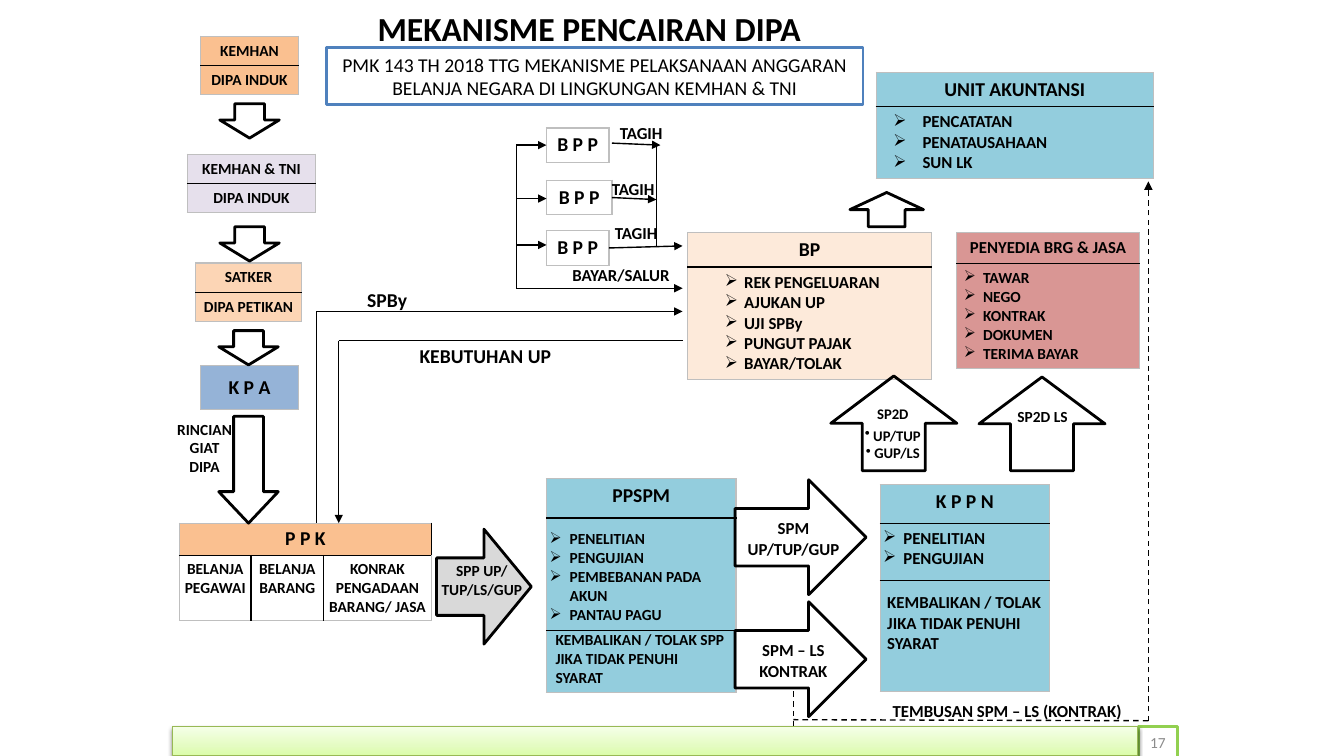
"""Builds the slide on how DIPA budget funds are disbursed."""
from dataclasses import dataclass

from lxml import etree
from pptx import Presentation
from pptx.dml.color import RGBColor
from pptx.enum.dml import MSO_LINE
from pptx.enum.shapes import MSO_CONNECTOR, MSO_SHAPE
from pptx.enum.text import MSO_ANCHOR, PP_ALIGN
from pptx.oxml import parse_xml
from pptx.oxml.ns import nsdecls, qn
from pptx.util import Inches, Pt

TOP, MIDDLE = MSO_ANCHOR.TOP, MSO_ANCHOR.MIDDLE
LEFT, CENTER = PP_ALIGN.LEFT, PP_ALIGN.CENTER
UP, RIGHT, RECT = MSO_SHAPE.UP_ARROW, MSO_SHAPE.RIGHT_ARROW, MSO_SHAPE.RECTANGLE
STRAIGHT, DASH = MSO_CONNECTOR.STRAIGHT, MSO_LINE.DASH
MARGINS = ("margin_left", "margin_top", "margin_right", "margin_bottom")


@dataclass(frozen=True)
class Theme:
    font: str = "Calibri"
    ink: str = "000000"
    white: str = "FFFFFF"
    edge: str = "BFBFBF"
    orange: str = "FAC090"
    peach: str = "FCD5B5"
    cream: str = "FDEADA"
    lilac: str = "E6E0EC"
    blue: str = "95B3D7"
    aqua: str = "93CDDD"
    rose: str = "D99694"
    gray: str = "D9D9D9"
    frame: str = "4F81BD"
    lime: str = "92D050"
    olive: str = "98B955"
    muted: str = "8C8C8C"
    glow: tuple = ((0, "DAFDA7"), (35, "E4FCC2"), (100, "F5FFE7"))
    title: float = 24
    head: float = 14
    body: float = 12
    small: float = 11
    tiny: float = 10.5


def rgb(code):
    return RGBColor.from_string(code)


def shadow(blur, distance, angle, alpha):
    return parse_xml(
        f'<a:effectLst {nsdecls("a")}><a:outerShdw blurRad="{Pt(blur)}" dist="{Pt(distance)}" '
        f'dir="{angle * 60000}" rotWithShape="0"><a:srgbClr val="000000">'
        f'<a:alpha val="{alpha * 1000}"/></a:srgbClr></a:outerShdw></a:effectLst>')


class Board:
    def __init__(self, deck, theme):
        self.theme = theme
        self.page = deck.slides.add_slide(deck.slide_layouts[5])
        self.shapes = self.page.shapes

    def set_text(self, frame, lines, size, align=CENTER, bold=True, color=None,
                 bullet=None, indent=(0, 0), plain=0, after=0):
        frame.word_wrap = True
        for number, line in enumerate(lines):
            para = frame.paragraphs[0] if number == 0 else frame.add_paragraph()
            para.alignment = align
            if after and number == 0:
                para.space_after = Pt(after)
            span = para.add_run()
            span.text = line
            formats = {"name": self.theme.font, "size": Pt(size), "bold": bold}
            for key, value in formats.items():
                setattr(span.font, key, value)
            span.font.color.rgb = rgb(color or self.theme.ink)
            if bullet and number >= plain:
                props = para._p.get_or_add_pPr()
                props.set("marL", str(Inches(indent[0])))
                props.set("indent", str(Inches(indent[1])))
                etree.SubElement(props, qn("a:buChar"), char=bullet)

    def title(self, box, text):
        shape = self.shapes.title
        for key, value in zip(("left", "top", "width", "height"), box):
            setattr(shape, key, Inches(value))
        shape.text_frame.vertical_anchor = MIDDLE
        self.set_text(shape.text_frame, [text], self.theme.title, after=6)
        props = shape.text_frame.paragraphs[0].runs[0].font._element
        props.find(qn("a:solidFill")).addnext(shadow(3, 3, 45, 50))

    def label(self, box, lines, size, **style):
        shape = self.shapes.add_textbox(*map(Inches, box))
        shape.text_frame.vertical_anchor = MIDDLE
        self.set_text(shape.text_frame, lines, size, **style)

    def shape(self, kind, box, fill=None, line=None, weight=2, turn=0, head=None):
        shape = self.shapes.add_shape(kind, *map(Inches, box))
        shape.shadow.inherit = False
        shape.rotation = turn
        if head:
            shape.adjustments[1] = head
        if fill:
            shape.fill.solid()
            shape.fill.fore_color.rgb = rgb(fill)
        else:
            shape.fill.background()
        shape.line.color.rgb = rgb(line or self.theme.ink)
        shape.line.width = Pt(weight)
        return shape

    def strip(self, box):
        shape = self.shape(RECT, box, self.theme.white, self.theme.olive, 0.75)
        props = shape.element.spPr
        stops = "".join(f'<a:gs pos="{at * 1000}"><a:srgbClr val="{code}"/></a:gs>'
                        for at, code in self.theme.glow)
        props.replace(props.find(qn("a:solidFill")), parse_xml(
            f'<a:gradFill {nsdecls("a")} rotWithShape="1"><a:gsLst>{stops}</a:gsLst>'
            '<a:lin ang="16200000" scaled="0"/></a:gradFill>'))
        props.replace(props.find(qn("a:effectLst")), shadow(3.1, 1.6, 90, 38))

    def line(self, start, end, arrow=False, dashed=False):
        link = self.shapes.add_connector(STRAIGHT, *map(Inches, start + end))
        link.line.color.rgb = rgb(self.theme.ink)
        link.line.width = Pt(1)
        if dashed:
            link.line.dash_style = DASH
        if arrow:
            etree.SubElement(link.line._get_or_add_ln(), qn("a:tailEnd"), type="triangle")
        etree.SubElement(link.element.spPr, qn("a:effectLst"))

    def table(self, corner, widths, heights, rows, fills):
        box = (*corner, sum(widths), sum(heights))
        grid = self.shapes.add_table(len(heights), len(widths), *map(Inches, box)).table
        grid.first_row = grid.horz_banding = False
        for column, width in zip(grid.columns, widths):
            column.width = Inches(width)
        for row, height in zip(grid.rows, heights):
            row.height = Inches(height)
        for r, cells in enumerate(rows):
            if len(cells) < len(widths):
                grid.cell(r, 0).merge(grid.cell(r, len(widths) - 1))
            for c, content in enumerate(cells):
                self.fill_cell(grid.cell(r, c), fills[r], **content)
            for c in range(len(widths)):
                outer = {"L": c == 0, "R": c == len(widths) - 1,
                         "T": r == 0, "B": r == len(heights) - 1}
                self.borders(grid.cell(r, c), outer)

    def fill_cell(self, cell, fill, lines, size, insets=(0.07, 0.05, 0.07, 0.05),
                  anchor=TOP, **style):
        for key, value in zip(MARGINS, insets):
            setattr(cell, key, Inches(value))
        cell.vertical_anchor = anchor
        if fill:
            cell.fill.solid()
            cell.fill.fore_color.rgb = rgb(fill)
        else:
            cell.fill.background()
        self.set_text(cell.text_frame, lines, size, **style)

    def borders(self, cell, outer):
        props = cell._tc.get_or_add_tcPr()
        for place, (side, is_outer) in enumerate(outer.items()):
            code = self.theme.edge if is_outer else self.theme.ink
            props.insert(place, parse_xml(
                f'<a:ln{side} {nsdecls("a")} w="{Pt(1)}"><a:solidFill>'
                f'<a:srgbClr val="{code}"/></a:solidFill></a:ln{side}>'))

    def card(self, corner, width, heights, fill, *cells):
        self.table(corner, [width], heights, [[cell] for cell in cells], [fill] * len(cells))


def cell(size, *lines, **style):
    return {"lines": lines, "size": size, **style}


def points(size, indent, *lines, **style):
    return cell(size, *lines, align=LEFT, bullet="➢", indent=indent, **style)


def draw_tables(board):
    t = board.theme
    for left, top, width, fill, names in (
            (1.99, 0.36, 0.97, t.orange, ("KEMHAN", "DIPA INDUK")),
            (1.86, 1.53, 1.27, t.lilac, ("KEMHAN & TNI", "DIPA INDUK")),
            (1.94, 2.61, 1.05, t.peach, ("SATKER", "DIPA PETIKAN"))):
        board.card((left, top), width, [0.29, 0.29], fill, *(cell(t.small, name) for name in names))
    board.card((1.99, 3.63), 0.97, [0.43], t.blue, cell(t.head, "K P A", anchor=MIDDLE))
    for top, width in ((1.27, 0.62), (1.79, 0.65), (2.29, 0.62)):
        board.card((5.42, top), width, [0.34], None, cell(t.head, "B P P", anchor=MIDDLE))
    tight = {"insets": (0, 0.04, 0, 0.04)}
    spending = (("BELANJA", "PEGAWAI"), ("BELANJA", "BARANG"), ("KONRAK PENGADAAN BARANG/ JASA",))
    board.table((1.78, 5.19), [0.71, 0.72, 1.07], [0.32, 0.64],
                [[cell(t.head, "P P K", **tight)],
                 [cell(t.small, *lines, **tight) for lines in spending]], [t.orange, None])
    board.card((5.42, 4.75), 1.88, [0.39, 1.1, 0.62], t.aqua, cell(t.head, "PPSPM"),
               points(t.small, (0.2, -0.2), "PENELITIAN", "PENGUJIAN", "PEMBEBANAN PADA AKUN",
                      "PANTAU PAGU", insets=(0.03, 0.12, 0.07, 0.05)),
               cell(t.small, "KEMBALIKAN / TOLAK SPP JIKA TIDAK PENUHI SYARAT", align=LEFT,
                    anchor=MIDDLE, insets=(0.09, 0, 0.07, 0.05)))
    board.card((8.73, 4.81), 1.68, [0.38, 0.57, 1.1], t.aqua, cell(t.head, "K P P N"),
               points(t.body, (0.2, -0.2), "PENELITIAN", "PENGUJIAN",
                      insets=(0.03, 0.05, 0.07, 0.05)),
               cell(t.body, "KEMBALIKAN / TOLAK JIKA TIDAK PENUHI SYARAT", align=LEFT,
                    insets=(0.07, 0.12, 0.07, 0.05)))
    board.card((6.82, 2.31), 2.42, [0.34, 1.11], t.cream, cell(t.head, "BP"),
               points(t.body, (0.49, -0.19), "REK PENGELUARAN", "AJUKAN UP", "UJI SPBy",
                      "PUNGUT PAJAK", "BAYAR/TOLAK"))
    board.card((9.49, 2.31), 1.81, [0.3, 1.04], t.rose, cell(t.body, "PENYEDIA BRG & JASA"),
               points(t.small, (0.19, -0.19), "TAWAR", "NEGO", "KONTRAK", "DOKUMEN",
                      "TERIMA BAYAR"))
    board.card((8.69, 0.72), 2.75, [0.34, 0.71], t.aqua, cell(t.head, "UNIT AKUNTANSI"),
               points(t.body, (0.39, -0.29), "PENCATATAN", "PENATAUSAHAAN", "SUN LK"))


def draw_flow(board):
    t = board.theme
    board.shape(RIGHT, (4.33, 5.25, 0.94, 1.14), t.gray)
    for top in (4.76, 5.97):
        board.shape(RIGHT, (7.29, top, 1.3, 1.14))
    for box in ((8.24, 3.73, 1.25, 0.94), (9.71, 3.74, 1.25, 0.93), (8.43, 1.91, 0.73, 0.34)):
        board.shape(UP, box)
    for left, top, height in ((2.18, 1.03, 0.34), (2.18, 2.25, 0.34),
                              (2.17, 3.28, 0.34), (2.17, 4.13, 1.06)):
        board.shape(UP, (left, top, 0.59, height), turn=180, head=0.53)
    for start, end in (((6.07, 1.42), (6.55, 1.44)), ((6.07, 1.96), (6.51, 1.98)),
                       ((6.04, 2.46), (6.77, 2.44)), ((5.12, 2.86), (6.77, 2.86)),
                       ((3.14, 3.09), (6.77, 3.09)), ((3.36, 3.38), (3.36, 5.19)),
                       *(((5.12, y), (5.42, y)) for y in (1.44, 1.97, 2.43))):
        board.line(start, end, arrow=True)
    for start, end in (((6.51, 1.45), (6.51, 2.44)), ((5.12, 1.44), (5.12, 2.86)),
                       ((3.14, 3.09), (3.14, 5.19)), ((3.36, 3.38), (6.77, 3.38))):
        board.line(start, end)
    board.line((7.87, 6.86), (7.87, 7.26), dashed=True)
    board.line((11.39, 7.15), (7.87, 7.14), dashed=True)
    board.line((11.39, 7.25), (11.39, 1.8), arrow=True, dashed=True)


def draw_labels(board):
    t = board.theme
    for box, size, *lines in (
            ((4.15, 5.44, 1.26, 0.62), t.small, "SPP UP/ TUP/LS/GUP"),
            ((7.22, 5.03, 1.3, 0.62), t.body, "SPM UP/TUP/GUP"),
            ((7.22, 6.24, 1.3, 0.62), t.body, "SPM – LS KONTRAK"),
            ((9.98, 3.96, 0.72, 0.34), t.small, "SP2D LS"),
            ((8.75, 6.74, 2.48, 0.62), t.body, "TEMBUSAN SPM – LS (KONTRAK)"),
            ((3.93, 3.33, 1.77, 0.39), t.head, "KEBUTUHAN UP"),
            ((3.19, 2.78, 1.3, 0.39), t.head, "SPBy"),
            ((1.63, 4.13, 0.8, 0.62), t.small, "RINCIAN", "GIAT DIPA"),
            ((5.71, 1.12, 1.3, 0.39), t.body, "TAGIH"),
            ((5.63, 1.68, 1.3, 0.39), t.body, "TAGIH"),
            ((5.66, 2.11, 1.3, 0.39), t.body, "TAGIH"),
            ((5.51, 2.53, 1.3, 0.39), t.body, "BAYAR/SALUR")):
        board.label(box, lines, size)
    board.label((8.46, 3.92, 0.79, 0.76), ["SP2D", " UP/TUP", " GUP/LS"], t.tiny,
                bullet="•", plain=1, after=3)
    rule = board.shape(RECT, (3.24, 0.47, 5.32, 0.57), t.white, t.frame)
    board.set_text(rule.text_frame, ["PMK 143 TH 2018 TTG MEKANISME PELAKSANAAN ANGGARAN "
                                     "BELANJA NEGARA DI LINGKUNGAN KEMHAN & TNI"],
                   t.head, bold=False)
    number = board.shape(RECT, (11.29, 7.21, 0.39, 0.31), t.white, t.lime)
    board.set_text(number.text_frame, ["17"], t.small, bold=False, color=t.muted)
    board.strip((1.71, 7.21, 9.57, 0.29))


def main():
    deck = Presentation()
    deck.slide_width, deck.slide_height = Inches(13.33), Inches(7.5)
    board = Board(deck, Theme())
    board.title((3.35, 0.05, 4.99, 0.45), "MEKANISME PENCAIRAN DIPA")
    draw_tables(board)
    draw_flow(board)
    draw_labels(board)
    deck.save("out.pptx")


if __name__ == "__main__":
    main()
